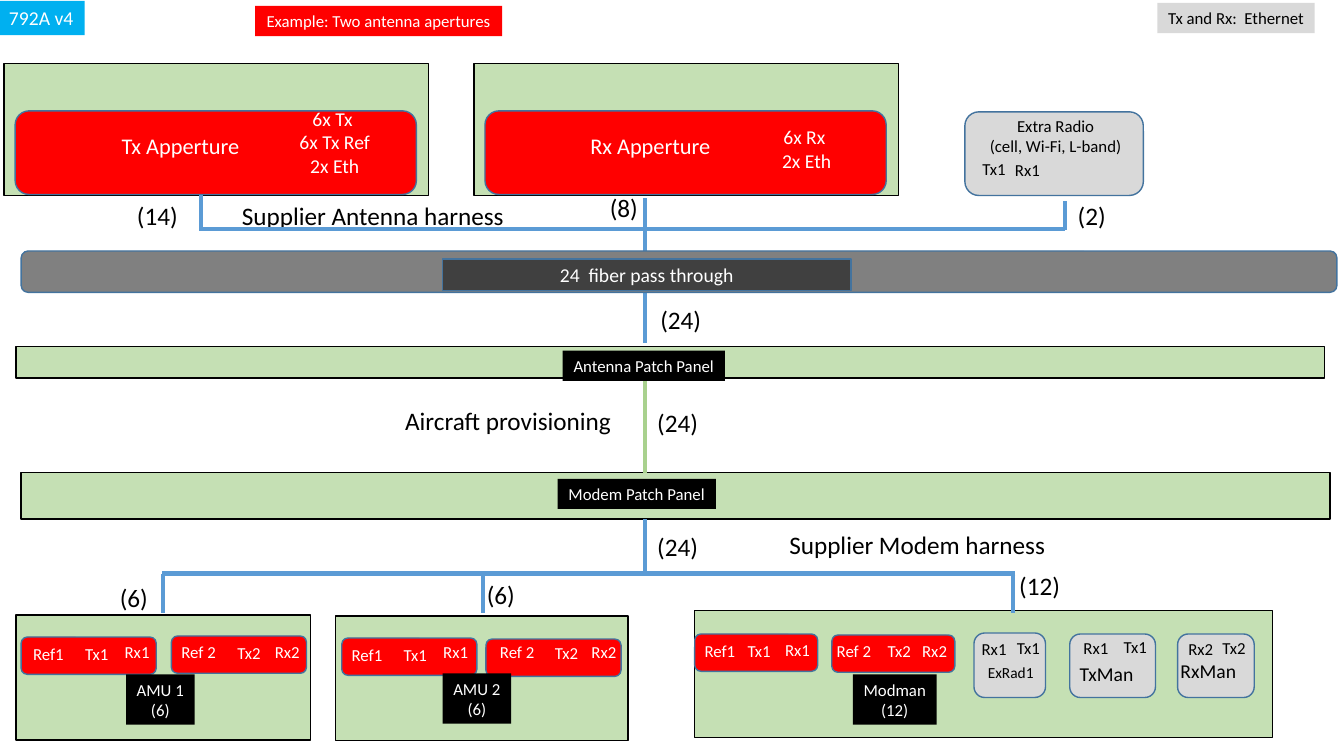
import pptx
import pptx.util
import pptx.dml.color
import pptx.enum.shapes
import pptx.enum.text
import lxml.etree
from dataclasses import dataclass

SHAPES = pptx.enum.shapes.MSO_SHAPE
ALIGN = pptx.enum.text.PP_ALIGN
ANCHOR = pptx.enum.text.MSO_ANCHOR
WIDTH, HEIGHT = 13.33, 7.5
COLUMNS, ROWS = 13.33, 7.5  # grid of one-inch cells


@dataclass(frozen=True)
class Theme:
    font: str = "Calibri"
    white: str = "FFFFFF"
    black: str = "000000"
    green: str = "C5E0B4"
    red: str = "FF0000"
    light: str = "D9D9D9"
    gray: str = "808080"
    dark: str = "404040"
    cyan: str = "00B0F0"
    outline: str = "43739E"
    blue_link: str = "5B9BD5"
    green_link: str = "A9D18E"
    tiny: int = 11
    small: int = 12
    medium: int = 14
    title: int = 16
    large: int = 18
    link_width: int = 3


THEME = Theme()


def across(columns):
    return pptx.util.Inches(columns * WIDTH / COLUMNS)


def down(rows):
    return pptx.util.Inches(rows * HEIGHT / ROWS)


def rgb(color):
    return pptx.dml.color.RGBColor.from_string(color)


def add_box(slide, box, fill, line=None, rounded=False):
    left, top, width, height = box
    kind = SHAPES.ROUNDED_RECTANGLE if rounded else SHAPES.RECTANGLE
    shape = slide.shapes.add_shape(kind, across(left), down(top), across(width), down(height))
    shape.shadow.inherit = False
    shape.fill.solid()
    shape.fill.fore_color.rgb = rgb(fill)
    if line:
        shape.line.color.rgb = rgb(line)
        shape.line.width = pptx.util.Pt(1)
    else:
        shape.line.fill.background()
    return shape


def add_text(slide, box, text, size, color=THEME.black, align=ALIGN.CENTER,
             fill=None, line=None, wrap=False, anchor=ANCHOR.TOP):
    if fill:
        shape = add_box(slide, box, fill, line)
    else:
        left, top, width, height = box
        shape = slide.shapes.add_textbox(across(left), down(top), across(width), down(height))
    frame = shape.text_frame
    frame.text = text
    frame.word_wrap = wrap
    frame.vertical_anchor = anchor
    for paragraph in frame.paragraphs:
        paragraph.alignment = align
        paragraph.font.name = THEME.font
        paragraph.font.size = pptx.util.Pt(size)
        paragraph.font.color.rgb = rgb(color)


def add_link(slide, start, end, color=THEME.blue_link):
    connector = slide.shapes.add_connector(
        pptx.enum.shapes.MSO_CONNECTOR.STRAIGHT,
        across(start[0]), down(start[1]), across(end[0]), down(end[1]))
    connector.line.color.rgb = rgb(color)
    connector.line.width = pptx.util.Pt(THEME.link_width)
    namespace = "{http://schemas.openxmlformats.org/drawingml/2006/main}"
    lxml.etree.SubElement(connector._element.spPr, namespace + "effectLst")


def add_ports(slide, left, top, ports, color):
    """Each port is a name, its centre and its drop from the given corner."""
    for name, center, drop in ports:
        add_text(slide, (left + center - 0.32, top + drop, 0.64, 0.3), name, THEME.small, color)


def add_header(slide):
    for box, text, size, color, fill, align in (
            ((-0.01, 0.01, 0.85, 0.34), "792A v4", THEME.medium, THEME.white, THEME.cyan, ALIGN.LEFT),
            ((2.53, 0.06, 2.45, 0.3), "Example: Two antenna apertures", THEME.small,
             THEME.white, THEME.red, ALIGN.CENTER),
            ((11.48, 0.03, 1.56, 0.3), "Tx and Rx:  Ethernet", THEME.small,
             THEME.black, THEME.light, ALIGN.CENTER)):
        add_text(slide, box, text, size, color, align, fill, anchor=ANCHOR.MIDDLE)


def add_aperture(slide, left, top, name, name_left, feeds, feeds_box):
    add_box(slide, (left, top, 4.21, 1.31), THEME.green, THEME.black)
    add_box(slide, (left + 0.11, top + 0.47, 3.98, 0.83), THEME.red, THEME.outline, True)
    add_text(slide, (left + name_left, top + 0.63, 1.4, 0.37), name, THEME.title, THEME.white)
    feeds_left, feeds_top, feeds_height = feeds_box
    add_text(slide, (left + feeds_left, top + feeds_top, 1.42, feeds_height),
             feeds, THEME.medium, THEME.white, wrap=True)


def add_extra_radio(slide, left, top):
    add_box(slide, (left, top, 1.77, 0.83), THEME.light, THEME.outline, True)
    add_text(slide, (left + 0.14, top - 0.01, 1.52, 0.5),
             "Extra Radio\v(cell, Wi-Fi, L-band)", THEME.small)
    add_ports(slide, left, top, (("Tx1", 0.29, 0.42), ("Rx1", 0.62, 0.43)), THEME.black)


def add_patch_panel(slide, box, name, label_box):
    left, top, _, _ = box
    label_left, label_top, label_width = label_box
    add_box(slide, box, THEME.green, THEME.black)
    add_text(slide, (left + label_left, top + label_top, label_width, 0.3),
             name, THEME.small, THEME.white, fill=THEME.black)


def add_pass_through(slide, left, top):
    add_box(slide, (left, top, 13.05, 0.41), THEME.gray, THEME.outline, True)
    add_text(slide, (left + 4.18, top + 0.08, 4.05, 0.31), "24  fiber pass through", THEME.medium,
             THEME.white, fill=THEME.dark, line=THEME.outline, wrap=True, anchor=ANCHOR.MIDDLE)


def add_modem_unit(slide, box, name, name_box, chip_width, chips):
    left, top, _, _ = box
    add_box(slide, box, THEME.green, THEME.black)
    for chip_left, chip_top, ports in chips:
        chip = (left + chip_left, top + chip_top, chip_width, 0.37)
        add_box(slide, chip, THEME.red, THEME.outline, True)
        add_ports(slide, chip[0], chip[1], ports, THEME.white)
    name_left, name_top, name_width = name_box
    add_text(slide, (left + name_left, top + name_top, name_width, 0.5),
             name, THEME.small, THEME.white, fill=THEME.black)


def add_manager(slide, box, ports, name, name_box, size, align):
    left, top, _, _ = box
    add_box(slide, box, THEME.light, THEME.outline, True)
    add_ports(slide, left, top, ports, THEME.black)
    name_left, name_top, name_width = name_box
    add_text(slide, (left + name_left, top + name_top, name_width, 0.34),
             name, size, align=align, wrap=True)


def add_modem_row(slide, top):
    add_modem_unit(slide, (0.16, top, 2.92, 1.24), "AMU 1\n(6)", (1.09, 0.59, 0.68), 1.34, (
        (0.05, 0.22, (("Ref1", 0.27, 0.02), ("Tx1", 0.75, 0.02), ("Rx1", 1.15, 0))),
        (1.54, 0.21, (("Ref 2", 0.27, 0.01), ("Tx2", 0.77, 0.02), ("Rx2", 1.15, 0.01)))))
    add_modem_unit(slide, (3.33, top + 0.01, 2.9, 1.24), "AMU 2\n(6)", (1.06, 0.57, 0.68), 1.34, (
        (0.06, 0.22, (("Ref1", 0.25, 0.02), ("Tx1", 0.73, 0.02), ("Rx1", 1.13, -0.01))),
        (1.49, 0.23, (("Ref 2", 0.31, -0.02), ("Tx2", 0.8, -0.01), ("Rx2", 1.17, -0.02)))))
    add_modem_unit(slide, (6.89, top - 0.04, 5.73, 1.26), "Modman\n(12)", (1.57, 0.63, 0.83), 1.22, (
        (0, 0.23, (("Ref1", 0.25, 0.02), ("Tx1", 0.64, 0.02), ("Rx1", 1.02, 0.01))),
        (1.36, 0.24, (("Ref 2", 0.22, 0.01), ("Tx2", 0.67, 0.01), ("Rx2", 1.02, 0.01)))))
    add_manager(slide, (9.66, top + 0.18, 0.71, 0.64), (("Rx1", 0.2, 0.01), ("Tx1", 0.54, 0)),
                "ExRad1", (-0.06, 0.25, 0.85), THEME.tiny, ALIGN.CENTER)
    add_manager(slide, (10.61, top + 0.19, 0.85, 0.63), (("Rx1", 0.26, -0.01), ("Tx1", 0.65, -0.02)),
                "TxMan", (0, 0.23, 0.91), THEME.medium, ALIGN.LEFT)
    add_manager(slide, (11.68, top + 0.19, 0.76, 0.63), (("Rx2", 0.23, 0), ("Tx2", 0.56, -0.01)),
                "RxMan", (-0.07, 0.2, 0.96), THEME.medium, ALIGN.LEFT)


def add_harness(slide, trunk):
    # Captions and fiber counts
    for left, top, width, text in (
            (2.3, 1.94, 2.83, "Supplier Antenna harness"), (3.92, 3.97, 2.27, "Aircraft provisioning"),
            (7.73, 5.2, 2.77, "Supplier Modem harness"), (1.26, 1.94, 0.61, "(14)"),
            (5.95, 1.86, 0.48, "(8)"), (10.59, 1.94, 0.48, "(2)"), (6.45, 2.97, 0.61, "(24)"),
            (6.42, 3.99, 0.61, "(24)"), (6.42, 5.22, 0.61, "(24)"), (1.09, 5.73, 0.48, "(6)"),
            (4.73, 5.7, 0.48, "(6)"), (10.01, 5.61, 0.61, "(12)")):
        add_text(slide, (left, top, width, 0.4), text, THEME.large, align=ALIGN.LEFT)
    # Antenna side
    add_link(slide, (10.56, 2.27), (1.97, 2.27))
    for x, top in ((1.99, 1.93), (10.56, 1.99)):
        add_link(slide, (x, 2.28), (x, top))
    # Trunk
    add_link(slide, (trunk, 3.4), (trunk, 1.96))
    add_link(slide, (trunk, 4.69), (trunk, 3.78), THEME.green_link)
    add_link(slide, (trunk, 5.7), (trunk, 5.15))
    # Modem side
    add_link(slide, (10.07, 5.69), (1.61, 5.69))
    for x in (1.62, 4.79, 10.05):
        add_link(slide, (x, 6.08), (x, 5.69))


def main():
    presentation = pptx.Presentation()
    presentation.slide_width = pptx.util.Inches(WIDTH)
    presentation.slide_height = pptx.util.Inches(HEIGHT)
    slide = presentation.slides.add_slide(presentation.slide_layouts[6])
    add_header(slide)
    add_aperture(slide, 0.04, 0.63, "Tx Apperture", 1.05, "6x Tx \n6x Tx Ref\n2x Eth", (2.57, 0.38, 0.81))
    add_aperture(slide, 4.7, 0.63, "Rx Apperture", 1.05, "6x Rx \n2x Eth", (2.59, 0.56, 0.57))
    add_extra_radio(slide, 9.57, 1.11)
    add_modem_row(slide, 6.1)
    add_patch_panel(slide, (0.16, 3.44, 12.98, 0.31), "Antenna Patch Panel", (5.42, 0.04, 1.61))
    add_patch_panel(slide, (0.21, 4.69, 12.98, 0.46), "Modem Patch Panel", (5.32, 0.06, 1.57))
    add_harness(slide, 6.4)
    add_pass_through(slide, 0.21, 2.49)
    presentation.save("out.pptx")


if __name__ == "__main__":
    main()
